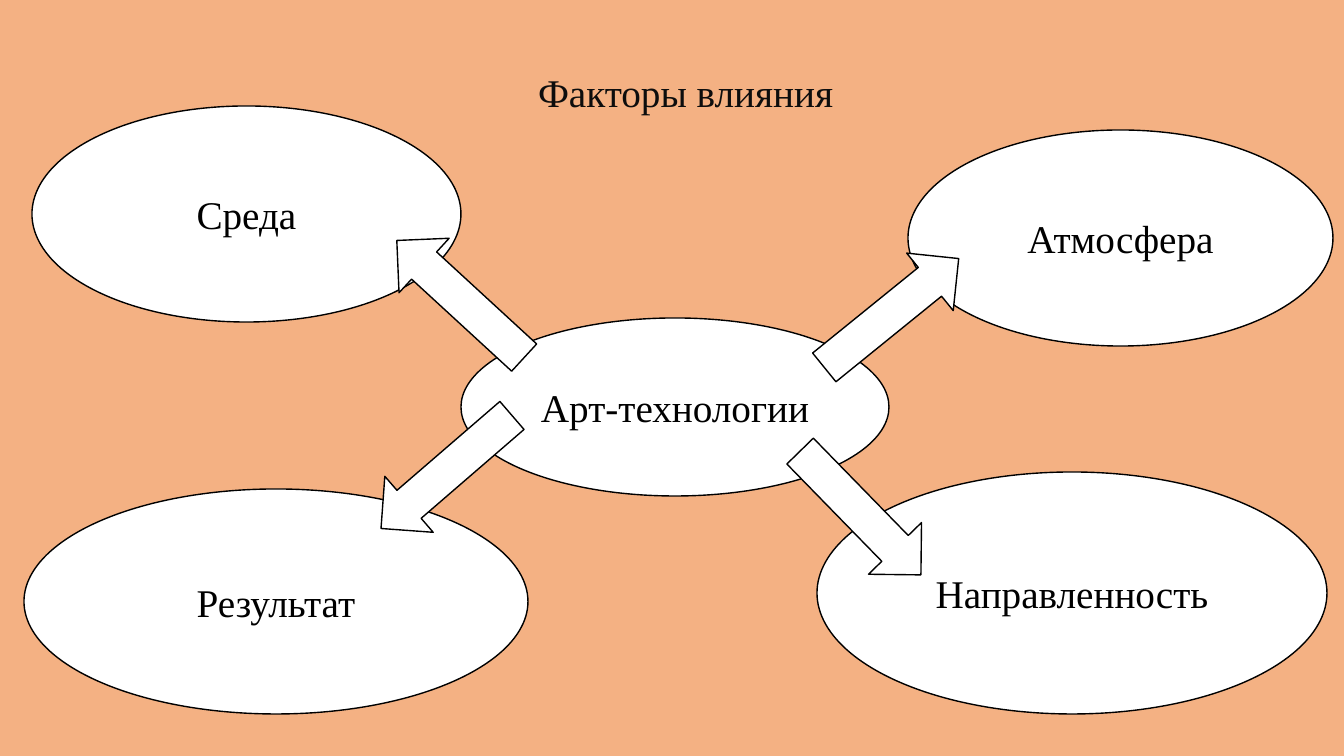
import pptx
import pptx.util
import pptx.dml.color
import pptx.enum.shapes
import pptx.enum.text

PX = 914400 / 100.8
COLORS = {"background": "F4B183", "fill": "FFFFFF", "line": "000000",
          "text": "000000", "title": "0D0D0D"}
SHAPES = pptx.enum.shapes.MSO_SHAPE
ANCHOR = pptx.enum.text.MSO_ANCHOR
ARROW_SIZE = (173, 74)

# text, left, top, width, height
ELLIPSES = [
    ("Арт-технологии", 461, 318, 428, 178),
    ("Среда", 32, 106, 429, 216),
    ("Результат", 24, 489, 504, 225),
    ("Атмосфера", 908, 130, 425, 216),
    ("Направленность", 817, 472, 510, 242),
]
# left, top, rotation
ARROWS = [(374, 262, 222.6), (805, 276, 321), (360, 435, 139.2), (774, 476, 45.7)]


def color(name):
    return pptx.dml.color.RGBColor.from_string(COLORS[name])


def emu(*lengths):
    return [pptx.util.Emu(round(n * PX)) for n in lengths]


class Diagram:
    font = "Times New Roman"
    size = pptx.util.Pt(28)
    line_width = pptx.util.Pt(1)

    def __init__(self, prs):
        self.s = prs.slides.add_slide(prs.slide_layouts[6])
        fill = self.s.background.fill
        fill.solid()
        fill.fore_color.rgb = color("background")

    def set_text(self, sp, text, color_name, anchor):
        tf = sp.text_frame
        tf.word_wrap = True
        tf.vertical_anchor = anchor
        tf.text = text
        p = tf.paragraphs[0]
        p.alignment = pptx.enum.text.PP_ALIGN.CENTER
        font = p.runs[0].font
        font.name = self.font
        font.size = self.size
        font.color.rgb = color(color_name)
        return p

    def title(self, text, *box):
        sp = self.s.shapes.add_textbox(*emu(*box))
        self.set_text(sp, text, "title", ANCHOR.BOTTOM).line_spacing = 0.9

    def outlined(self, kind, *box):
        sp = self.s.shapes.add_shape(kind, *emu(*box))
        sp.shadow.inherit = False
        sp.fill.solid()
        sp.fill.fore_color.rgb = color("fill")
        sp.line.color.rgb = color("line")
        sp.line.width = self.line_width
        return sp

    def ellipse(self, text, *box):
        sp = self.outlined(SHAPES.OVAL, *box)
        self.set_text(sp, text, "text", ANCHOR.MIDDLE)

    def arrow(self, left, top, rotation):
        sp = self.outlined(SHAPES.RIGHT_ARROW, left, top, *ARROW_SIZE)
        sp.rotation = rotation


def main():
    prs = pptx.Presentation()
    prs.slide_width, prs.slide_height = emu(1344, 756)
    diagram = Diagram(prs)
    diagram.title("Факторы влияния", 373, 0, 625, 121)
    for ellipse in ELLIPSES:
        diagram.ellipse(*ellipse)
    for arrow in ARROWS:
        diagram.arrow(*arrow)
    prs.save("out.pptx")


if __name__ == "__main__":
    main()
